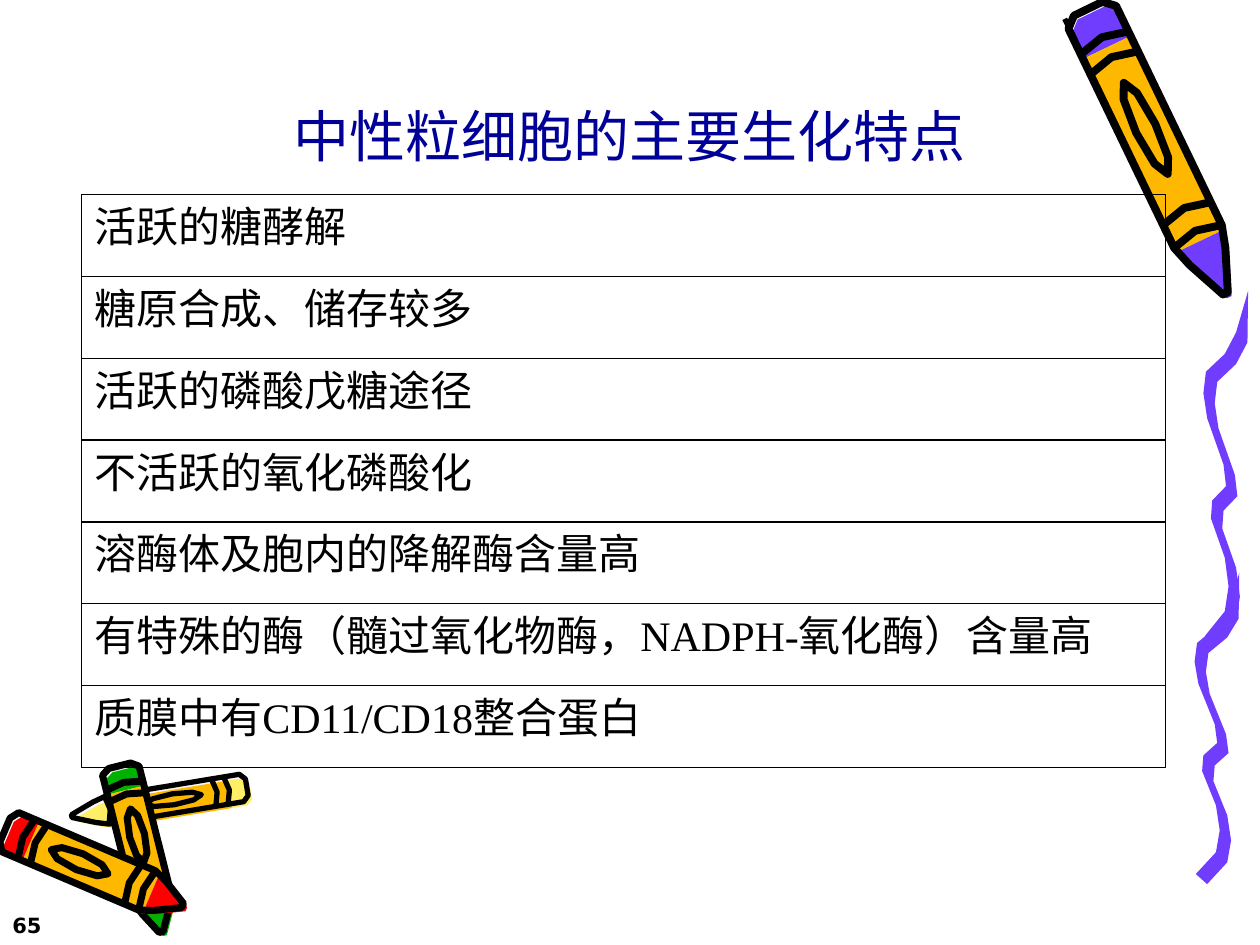
from math import cos, hypot, pi, sin

from lxml.etree import SubElement as Sub
from pptx import Presentation
from pptx.dml.color import RGBColor
from pptx.enum.shapes import MSO_CONNECTOR as Conn, MSO_SHAPE as Shape
from pptx.enum.text import MSO_ANCHOR as Anchor, PP_ALIGN as Align
from pptx.oxml.ns import qn
from pptx.util import Inches, Pt

BLACK, VIOLET, AMBER = "000000", "703DFF", "FFB800"
RED, GREEN, LEMON, PALE = "FF0000", "00B200", "FFEF66", "F8F8F8"

# A crayon is drawn on its own axis: u runs from 0 (cap) to 1 (tip),
# v from -1 to 1 across it.
NECK, END = 0.12, 0.8
CAP = [(NECK, -1), (0.03, -1), (0, -0.6), (0, 0.6), (0.03, 1), (NECK, 1)]
SHAFT = [(NECK, -1), (NECK, 1), (END, 1), (END, -1)]
TIP = [(END, -1), (END, 1), (0.87, 0.75), (1, 0.1), (1, -0.1), (0.87, -0.75)]
EDGE = CAP + TIP[1:] + TIP[:1]
RINGS = [NECK, 0.19, 0.72, END]
OVAL = [(0.42 + 0.16 * cos(i * pi / 4), 0.4 * sin(i * pi / 4)) for i in range(8)]
SLIP = 0.03  # the colours are printed a little off the ink lines

# start, tip, half width, end colour, ink width in points
PILE = [
    ((1.96, 6.25), (0.57, 6.48), 0.11, LEMON, 3),
    ((0.95, 6.08), (1.28, 7.4), 0.15, GREEN, 4),
    ((0.04, 6.59), (1.45, 7.19), 0.17, RED, 4),
]
BIG = ((8.64, 0.07), (9.73, 2.33), 0.21, VIOLET, 4.5)

# The wavy trail: x in inches from its left side, y as a share of its height.
SWAY = [(0.35, 0), (0.3, 0.13), (0.21, 0.19), (0.06, 0.24), (0.04, 0.3),
        (0.07, 0.37), (0.2, 0.5), (0.22, 0.56), (0.11, 0.6), (0.1, 0.65),
        (0.21, 0.76), (0.24, 0.84), (0.21, 0.91), (0.05, 0.98)]
TRAILS = [(9.49, 4.55, 2.48), (9.56, 2.31, 2.84)]  # left, top, height

TRAITS = [
    "活跃的糖酵解",
    "糖原合成、储存较多",
    "活跃的磷酸戊糖途径",
    "不活跃的氧化磷酸化",
    "溶酶体及胞内的降解酶含量高",
    "有特殊的酶（髓过氧化物酶，NADPH-氧化酶）含量高",
    "质膜中有CD11/CD18整合蛋白",
]
ROW = {"name": "Times New Roman", "size": Pt(24)}
TITLE = {"name": "Noto Sans CJK SC", "size": Pt(32)}
PAGE = {"name": "DejaVu Sans", "size": Pt(12), "bold": True}


def tint(hue):
    return RGBColor.from_string(hue)


def box(at):
    return [Inches(n) for n in at]


def trace(slide, dots, close=True):
    """Add a bare outline through points given in inches."""
    first, *rest = [(round(x * 1000), round(y * 1000)) for x, y in dots]
    pen = slide.shapes.build_freeform(*first, scale=Inches(0.001))
    pen.add_line_segments(rest, close=close)
    shape = pen.convert_to_shape()
    shape.shadow.inherit = False
    shape.fill.background()
    shape.line.fill.background()
    return shape


def paint(slide, dots, hue):
    fill = trace(slide, dots).fill
    fill.solid()
    fill.fore_color.rgb = tint(hue)


def ink(slide, dots, width, close=True):
    line = trace(slide, dots, close).line
    line.color.rgb = tint(BLACK)
    line.width = Pt(width)


def crayon(slide, start, tip, half, hue, width):
    (x, y), (dx, dy) = start, (tip[0] - start[0], tip[1] - start[1])
    size = hypot(dx, dy)

    def place(dots, slip=0):
        """Turn points on the crayon's axis into points on the slide."""
        return [(x + u * dx + v * half * dy / size + slip,
                 y + u * dy - v * half * dx / size + slip) for u, v in dots]

    paint(slide, place(EDGE), PALE)
    for part, shade in ((CAP, hue), (SHAFT, AMBER), (TIP, hue)):
        paint(slide, place(part, SLIP), shade)
    for part in (EDGE, OVAL):
        ink(slide, place(part), width)
    for u in RINGS:
        ink(slide, place([(u, -1), (u - 0.02, 0), (u, 1)]), width, False)


def trail(slide, left, top, height):
    """A ribbon that starts in a point and follows the sway."""
    head, *turns = [(left + x, top + y * height) for x, y in SWAY]
    near, far = [[(x + side * 0.045, y + side * 0.04) for x, y in turns]
                 for side in (-1, 1)]
    paint(slide, [head, *near, *reversed(far)], VIOLET)


def stroke(slide, ends, hue, width):
    line = slide.shapes.add_connector(Conn.STRAIGHT, *box(ends))
    line.line.color.rgb = tint(hue)
    line.line.width = Pt(width)
    Sub(line._element.spPr, qn("a:effectLst"))


def write(shape, text, font, hue, align, anchor=Anchor.TOP):
    frame = shape.text_frame
    frame.word_wrap = True
    frame.vertical_anchor = anchor
    para = frame.paragraphs[0]
    para.alignment = align
    run = para.add_run()
    run.text = text
    run.font.color.rgb = tint(hue)
    for key, value in font.items():
        setattr(run.font, key, value)


def label(slide, at, *args):
    write(slide.shapes.add_textbox(*box(at)), *args)


def cell(slide, at, text):
    shape = slide.shapes.add_shape(Shape.RECTANGLE, *box(at))
    shape.shadow.inherit = False
    shape.fill.background()
    shape.line.color.rgb = tint(BLACK)
    shape.line.width = Pt(0.75)
    write(shape, text, ROW, BLACK, Align.JUSTIFY)


def main():
    deck = Presentation()
    deck.slide_width, deck.slide_height = box((10, 7.5))
    slide = deck.slides.add_slide(deck.slide_layouts[6])
    for look in PILE:
        crayon(slide, *look)
    for place in TRAILS:
        trail(slide, *place)
    crayon(slide, *BIG)
    stroke(slide, (8.45, 0.15, 8.53, 0.31), BLACK, 3)
    for i, text in enumerate(TRAITS):
        cell(slide, (0.65, 1.545 + 0.649 * i, 8.6, 0.65), text)
    label(slide, (2.12, 0.76, 5.76, 0.63), "中性粒细胞的主要生化特点",
          TITLE, "000099", Align.CENTER)
    label(slide, (0, 6.99, 2.08, 0.5), "65", PAGE, BLACK, Align.LEFT, Anchor.BOTTOM)
    deck.save("out.pptx")


if __name__ == "__main__":
    main()
